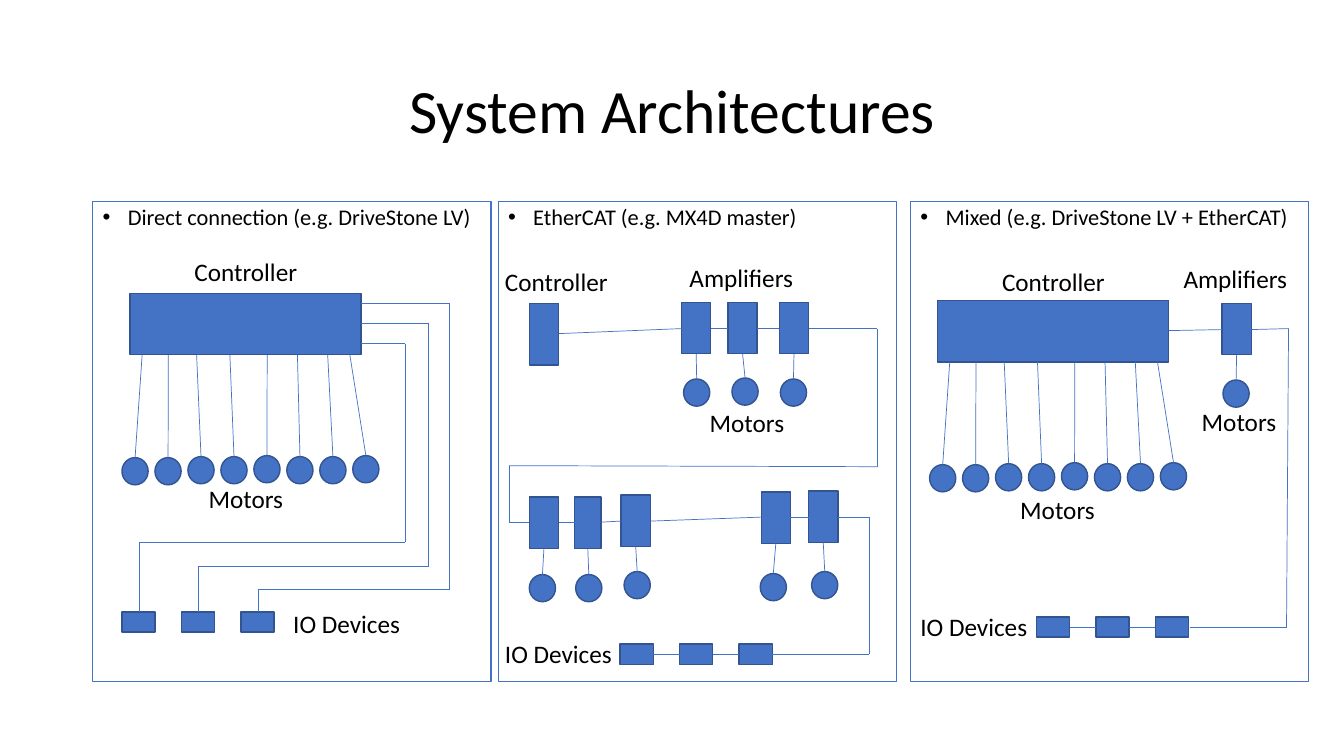
from dataclasses import dataclass
from itertools import pairwise

from lxml import etree
from pptx import Presentation
from pptx.dml.color import RGBColor
from pptx.enum.shapes import MSO_CONNECTOR as Wire, MSO_SHAPE as Preset
from pptx.enum.text import MSO_ANCHOR as Anchor, MSO_AUTO_SIZE as Fit, PP_ALIGN as Align
from pptx.oxml.ns import qn
from pptx.util import Inches, Pt


@dataclass(frozen=True)
class Theme:
    font: str = "Calibri"
    blue: RGBColor = RGBColor(0x44, 0x72, 0xC4)
    edge: RGBColor = RGBColor(0x32, 0x54, 0x91)
    ink: RGBColor = RGBColor(0, 0, 0)
    title: Pt = Pt(44)
    heading: Pt = Pt(16)
    label: Pt = Pt(18)
    frame_line: Pt = Pt(0.75)
    part_line: Pt = Pt(1)
    wire_line: Pt = Pt(0.5)


THEME = Theme()
MOTOR = (0.26, 0.27)
AMPLIFIER = (0.29, 0.51)
IO_DEVICE = (0.33, 0.2)
IO_STEP = 0.59
BANK = (2.29, 0.61)
LABELS = {  # text: (width, wraps)
    "Controller": (1.23, False),
    "Amplifiers": (1.24, False),
    "Motors": (1.01, True),
    "IO Devices": (1.29, True),
}


def assign(target, values):
    for key, value in values.items():
        setattr(target, key, value)


def write(frame, text, size, frame_format, paragraph_format):
    assign(frame, frame_format)
    paragraph = frame.paragraphs[0]
    assign(paragraph, paragraph_format)
    run = paragraph.add_run()
    run.text = text
    assign(run.font, {"name": THEME.font, "size": size})
    run.font.color.rgb = THEME.ink
    return paragraph


# Basic elements
def add_title(slide, text):
    title = slide.shapes.title
    assign(title, {"left": Inches(0.92), "top": Inches(0.4),
                   "width": Inches(11.5), "height": Inches(1.45)})
    write(title.text_frame, text, THEME.title,
          {"vertical_anchor": Anchor.MIDDLE},
          {"alignment": Align.CENTER, "line_spacing": 0.9})


def add_outline(slide, preset, left, top, size, line_color, line_width):
    shape = slide.shapes.add_shape(preset, Inches(left), Inches(top),
                                   *map(Inches, size))
    shape.shadow.inherit = False
    shape.line.color.rgb = line_color
    shape.line.width = line_width
    return shape


def add_panel(slide, left, heading):
    panel = add_outline(slide, Preset.RECTANGLE, left, 2, (3.95, 4.76),
                        THEME.blue, THEME.frame_line)
    panel.fill.background()
    paragraph = write(panel.text_frame, heading, THEME.heading,
                      {"vertical_anchor": Anchor.TOP, "word_wrap": True},
                      {"alignment": Align.LEFT, "line_spacing": 0.9,
                       "space_before": Pt(10)})
    # Hanging bullet
    properties = paragraph._p.get_or_add_pPr()
    properties.set("marL", str(Inches(0.25)))
    properties.set("indent", str(-Inches(0.25)))
    etree.SubElement(properties, qn("a:buFont")).set("typeface", "Arial")
    etree.SubElement(properties, qn("a:buChar")).set("char", "•")


def add_part(slide, left, top, size, preset=Preset.RECTANGLE):
    part = add_outline(slide, preset, left, top, size, THEME.edge, THEME.part_line)
    part.fill.solid()
    part.fill.fore_color.rgb = THEME.blue


def add_wire(slide, *points):
    for start, end in pairwise(points):
        wire = slide.shapes.add_connector(Wire.STRAIGHT, *map(Inches, (*start, *end)))
        wire.line.color.rgb = THEME.blue
        wire.line.width = THEME.wire_line
        etree.SubElement(wire._element.spPr, qn("a:effectLst"))


def add_label(slide, text, left, top):
    width, wraps = LABELS[text]
    label = slide.shapes.add_textbox(Inches(left), Inches(top),
                                     Inches(width), Inches(0.4))
    write(label.text_frame, text, THEME.label,
          {"word_wrap": wraps, "auto_size": Fit.SHAPE_TO_FIT_TEXT},
          {"alignment": Align.LEFT})


# Assemblies
def add_motor(slide, left, top, lead_start):
    add_part(slide, left, top, MOTOR, Preset.OVAL)
    add_wire(slide, lead_start, (left + MOTOR[0] / 2, top))


def add_amplifier(slide, left, top, motor_left, motor_top, width=AMPLIFIER[0]):
    height = AMPLIFIER[1]
    add_part(slide, left, top, (width, height))
    add_motor(slide, motor_left, motor_top, (left + width / 2, top + height))


def add_controller_bank(slide, left, top):
    add_part(slide, left, top, BANK)
    lead_offsets = (0.12, 0.38, 0.66, 0.99, 1.36, 1.66, 1.96, 2.18)
    motor_drops = (1.63, 1.63, 1.62, 1.62, 1.61, 1.62, 1.62, 1.61)
    for index, (offset, drop) in enumerate(zip(lead_offsets, motor_drops)):
        add_motor(slide, left - 0.08 + 0.327 * index, top + drop,
                  (left + offset, top + BANK[1]))


def add_io_row(slide, left, top, chained=True):
    width, height = IO_DEVICE
    lefts = [left + IO_STEP * index for index in range(3)]
    for device_left in lefts:
        add_part(slide, device_left, top, IO_DEVICE)
    if chained:
        middle = top + height / 2
        for current, following in pairwise(lefts):
            add_wire(slide, (current + width, middle), (following, middle))


# Panels
def add_direct_panel(slide):
    add_panel(slide, 0.92, "Direct connection (e.g. DriveStone LV)")
    add_controller_bank(slide, 1.29, 2.91)
    add_io_row(slide, 1.21, 6.07, chained=False)
    routes = ((3.41, 4.02, 5.38), (3.21, 4.25, 5.62), (3.01, 4.46, 5.85))
    for index, (start, right, turn) in enumerate(routes):
        device = 1.38 + IO_STEP * index
        add_wire(slide, (3.58, start), (right, start), (right, turn),
                 (device, turn), (device, 6.07))
    add_label(slide, "Controller", 1.83, 2.49)
    add_label(slide, "Motors", 1.97, 4.75)
    add_label(slide, "IO Devices", 2.81, 5.99)


def add_ethercat_panel(slide):
    add_panel(slide, 4.94, "EtherCAT (e.g. MX4D master)")
    add_part(slide, 5.25, 3.01, (0.29, 0.61))
    for amplifier in (
        (6.76, 3, 6.78, 3.76), (7.22, 3, 7.26, 3.75), (7.73, 3, 7.74, 3.76),
        (5.25, 4.93, 5.25, 5.7), (5.7, 4.93, 5.71, 5.7, 0.26),
        (6.16, 4.91, 6.19, 5.67), (7.55, 4.88, 7.54, 5.69),
        (8.02, 4.87, 8.05, 5.67),
    ):
        add_amplifier(slide, *amplifier)
    add_io_row(slide, 6.15, 6.39)
    # Bus from the controller to the last device
    add_wire(slide, (5.54, 3.31), (6.76, 3.26))
    add_wire(slide, (7.05, 3.26), (7.22, 3.26))
    add_wire(slide, (7.51, 3.26), (7.73, 3.26))
    add_wire(slide, (8.02, 3.26), (8.7, 3.26), (8.7, 4.63), (5.05, 4.62),
             (5.05, 5.18), (5.25, 5.18))
    add_wire(slide, (5.54, 5.18), (5.7, 5.18))
    add_wire(slide, (5.96, 5.18), (6.16, 5.17))
    add_wire(slide, (6.45, 5.17), (7.55, 5.13))
    add_wire(slide, (7.84, 5.13), (8.02, 5.13))
    add_wire(slide, (8.31, 5.13), (8.62, 5.13), (8.62, 6.49), (7.66, 6.49))
    add_label(slide, "Controller", 4.91, 2.59)
    add_label(slide, "Amplifiers", 6.74, 2.55)
    add_label(slide, "Motors", 6.94, 3.99)
    add_label(slide, "IO Devices", 4.91, 6.28)


def add_mixed_panel(slide):
    add_panel(slide, 9.03, "Mixed (e.g. DriveStone LV + EtherCAT)")
    add_controller_bank(slide, 9.3, 2.98)
    add_amplifier(slide, 12.12, 3.01, 12.13, 3.77)
    add_io_row(slide, 10.28, 6.12)
    add_wire(slide, (11.59, 3.28), (12.12, 3.27))
    add_wire(slide, (12.41, 3.27), (12.78, 3.26), (12.76, 6.22), (11.8, 6.22))
    add_label(slide, "Controller", 9.84, 2.59)
    add_label(slide, "Amplifiers", 11.64, 2.56)
    add_label(slide, "Motors", 11.82, 3.98)
    add_label(slide, "Motors", 10.02, 4.86)
    add_label(slide, "IO Devices", 9.03, 6.02)


def main():
    deck = Presentation()
    assign(deck, {"slide_width": Inches(13.33), "slide_height": Inches(7.5)})
    slide = deck.slides.add_slide(deck.slide_layouts[5])
    add_title(slide, "System Architectures")
    add_direct_panel(slide)
    add_ethercat_panel(slide)
    add_mixed_panel(slide)
    deck.save("out.pptx")


if __name__ == "__main__":
    main()
